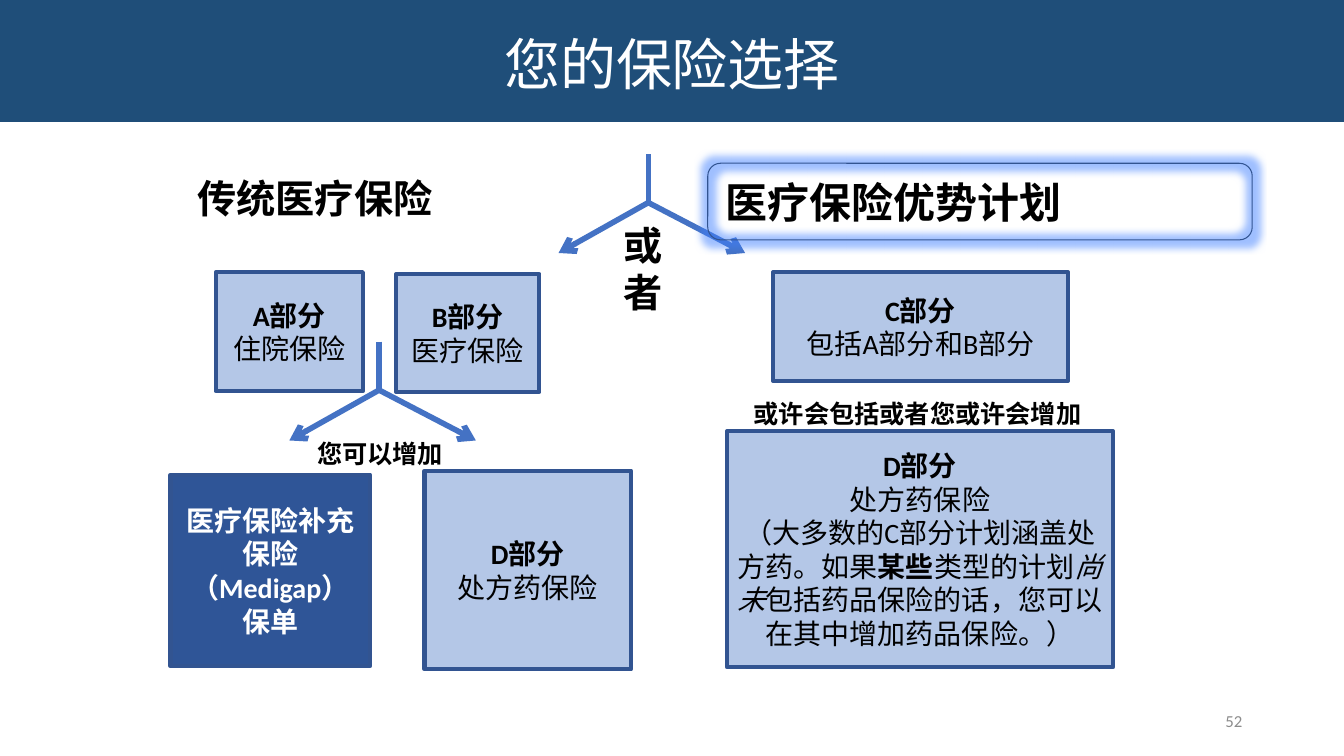
import pptx
import pptx.dml.color
import pptx.enum.lang
import pptx.enum.shapes
import pptx.enum.text
import pptx.util
from lxml import etree
from pptx.oxml.ns import qn
from pptx.util import Inches

COLORS = {
    "banner": "1F4E79", "arrow": "4472C4", "pale": "B4C7E7", "dark": "2F5597",
    "border": "325491", "black": "000000", "white": "FFFFFF", "gray": "8C8C8C",
    "glow": "4080FF",
}
ALIGN = pptx.enum.text.PP_ALIGN
ANCHOR = pptx.enum.text.MSO_ANCHOR
SHAPES = pptx.enum.shapes.MSO_SHAPE

TITLE = "您的保险选择"
PAGE_NUMBER = "52"

# (left, top, width, height), fill, text colour, paragraphs of (text, style) spans
BOXES = [
    ((2.14, 2.7, 1.46, 1.18), "pale", "black", [[("A部分", "b")], [("住院保险", "")]]),
    ((3.93, 2.72, 1.42, 1.17), "pale", "black", [[("B部分", "b")], [("医疗保险", "")]]),
    ((4.21, 4.67, 2.05, 1.97), "pale", "black", [[("D部分", "b")], [("处方药保险", "")]]),
    ((1.69, 4.71, 1.98, 1.9), "dark", "white",
     [[("医疗保险补充保险（Medigap）保单", "b")]]),
    ((7.67, 2.7, 2.92, 1.08), "pale", "black",
     [[("C部分", "b")], [("包括A部分和B部分", "")]]),
    ((7.21, 4.28, 3.83, 2.34), "pale", "black",
     [[("D部分", "b")], [("处方药保险", "")],
      [("（大多数的C部分计划涵盖处方药。如果", ""), ("某些", "b"), ("类型的计划", ""),
       ("尚未", "i"), ("包括药品保险的话，您可以在其中增加药品保险。）", "")]]),
]

# (left, top, width, height), text, size, alignment, left inset
LABELS = [
    ((1.86, 1.68, 3.51, 0.57), "传统医疗保险", 28, ALIGN.LEFT, 0.1),
    ((3.04, 4.3, 1.46, 0.4), "您可以增加", 18, ALIGN.CENTER, 0.1),
    ((5.92, 2.15, 0.92, 0.57), "或者", 28, ALIGN.CENTER, 0.1),
    ((7.02, 1.7, 5.4, 0.61), "医疗保险优势计划", 30, ALIGN.LEFT, 0.18),
    ((7.27, 3.9, 3.66, 0.4), "或许会包括或者您或许会增加", 18, ALIGN.CENTER, 0.1),
]

FORKS = [(3.76, 3.87), (6.43, 2.01)]
FORK_STEM, FORK_DROP, FORK_LEFT, FORK_RIGHT = 0.48, 0.5, 0.89, 0.96
HIGHLIGHT = (7.02, 1.62, 5.4, 0.76)


def color(name):
    return pptx.dml.color.RGBColor.from_string(COLORS[name])


def inches(lengths):
    return [Inches(length) for length in lengths]


def style_run(span, font, size, color_name, style=""):
    span.font.name = font
    span.font.size = pptx.util.Pt(size)
    span.font.bold = "b" in style
    span.font.italic = "i" in style
    span.font.color.rgb = color(color_name)
    span.font.language_id = pptx.enum.lang.MSO_LANGUAGE_ID.SIMPLIFIED_CHINESE


def add_block(page, kind, place, fill=None, border=3):
    block = page.shapes.add_shape(kind, *inches(place))
    block.shadow.inherit = False
    if fill:
        block.fill.solid()
        block.fill.fore_color.rgb = color(fill)
    else:
        block.fill.background()
    block.line.color.rgb = color("border")
    block.line.width = pptx.util.Pt(border)
    return block


def add_box(page, place, fill, ink, paragraphs):
    frame = add_block(page, SHAPES.RECTANGLE, place, fill).text_frame
    frame.word_wrap = True
    frame.vertical_anchor = ANCHOR.MIDDLE
    for index, spans in enumerate(paragraphs):
        para = frame.paragraphs[0] if index == 0 else frame.add_paragraph()
        para.alignment = ALIGN.CENTER
        for text, style in spans:
            span = para.add_run()
            span.text = text
            style_run(span, "Calibri", 20, ink, style)


def add_label(page, place, text, size, align, inset=0.1,
              font="Arial", ink="black", style="b"):
    frame = page.shapes.add_textbox(*inches(place)).text_frame
    frame.word_wrap = True
    frame.margin_left = Inches(inset)
    frame.text = text
    frame.paragraphs[0].alignment = align
    style_run(frame.paragraphs[0].runs[0], font, size, ink, style)
    return frame


def add_line(page, start, end, arrow):
    line = page.shapes.add_connector(
        pptx.enum.shapes.MSO_CONNECTOR.STRAIGHT, *inches(start + end))
    line.line.color.rgb = color("arrow")
    line.line.width = pptx.util.Pt(4)
    if arrow:
        etree.SubElement(line.line._get_or_add_ln(), qn("a:tailEnd"), type="arrow")
    etree.SubElement(line._element.spPr, qn("a:effectLst"))


def add_fork(page, x, y):
    """A stem that splits at (x, y) into two arrows."""
    add_line(page, (x, y), (x - FORK_LEFT, y + FORK_DROP), True)
    add_line(page, (x, y), (x + FORK_RIGHT, y + FORK_DROP), True)
    add_line(page, (x, y - FORK_STEM), (x, y), False)


def add_glow(shape, radius):
    effects = shape._element.spPr.find(qn("a:effectLst"))
    glow = etree.SubElement(effects, qn("a:glow"), rad=str(Inches(radius)))
    tint = etree.SubElement(glow, qn("a:srgbClr"), val=COLORS["glow"])
    etree.SubElement(tint, qn("a:alpha"), val="50000")


def add_title(page):
    title = page.shapes.title
    title.left, title.top, title.width, title.height = inches((0, 0, 13.33, 1.21))
    title.fill.solid()
    title.fill.fore_color.rgb = color("banner")
    frame = title.text_frame
    frame.text = TITLE
    frame.auto_size = pptx.enum.text.MSO_AUTO_SIZE.NONE
    frame.vertical_anchor = ANCHOR.MIDDLE
    frame.margin_top = Inches(0.1)
    frame.paragraphs[0].alignment = ALIGN.CENTER
    style_run(frame.paragraphs[0].runs[0], "Arial", 40, "white")


def main():
    deck = pptx.Presentation()
    deck.slide_width, deck.slide_height = inches((13.33, 7.5))
    page = deck.slides.add_slide(deck.slide_layouts[5])
    add_title(page)
    for box in BOXES:
        add_box(page, *box)
    for label in LABELS:
        add_label(page, *label)
    for fork in FORKS:
        add_fork(page, *fork)
    add_glow(add_block(page, SHAPES.ROUNDED_RECTANGLE, HIGHLIGHT, border=0.75), 0.14)
    number = add_label(page, (9.42, 6.95, 3, 0.4), PAGE_NUMBER, 12, ALIGN.RIGHT,
                       font="Calibri", ink="gray", style="")
    number.vertical_anchor = ANCHOR.MIDDLE
    deck.save("out.pptx")


if __name__ == "__main__":
    main()
